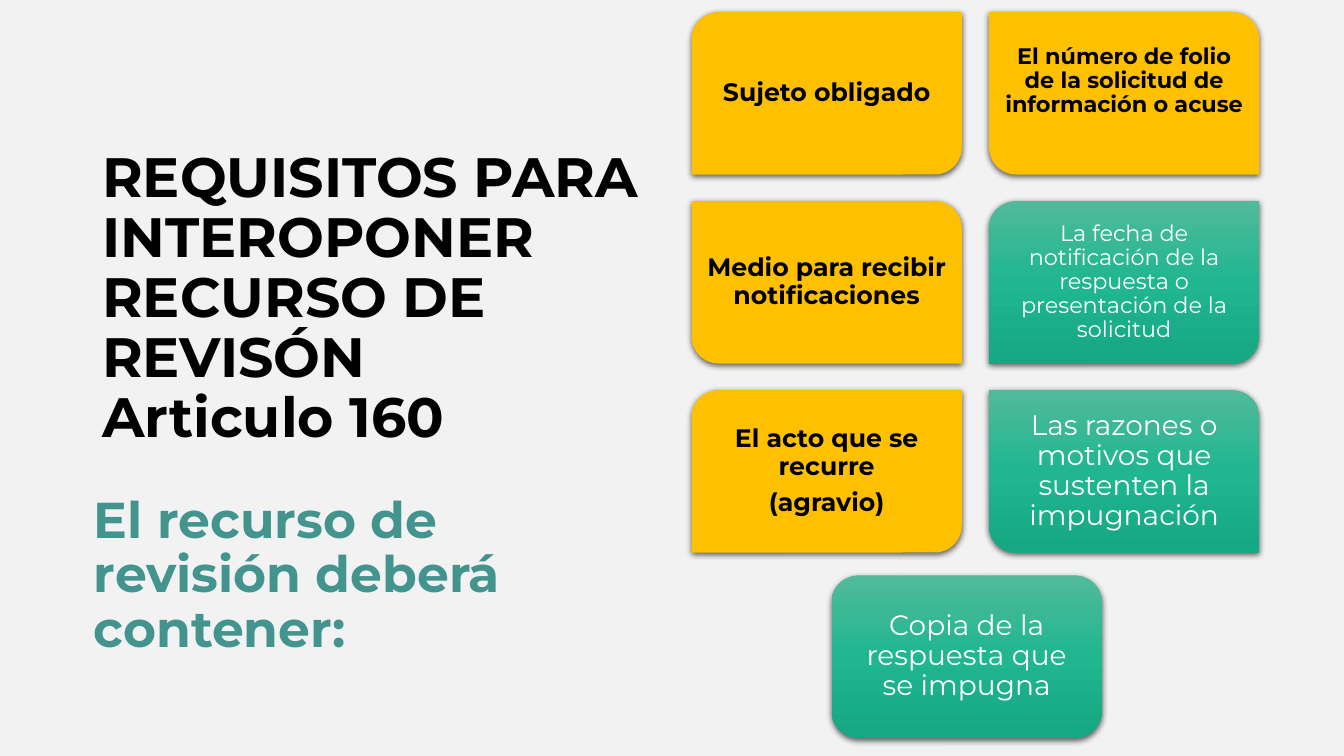
import copy

import pptx
import pptx.util
import pptx.dml.color
import pptx.enum.shapes
import pptx.enum.text
import pptx.oxml

Pt = pptx.util.Pt
RGBColor = pptx.dml.color.RGBColor
Shape = pptx.enum.shapes.MSO_SHAPE
Align = pptx.enum.text.PP_ALIGN
Anchor = pptx.enum.text.MSO_ANCHOR

FONT = "Montserrat"
GREY = RGBColor(0xF2, 0xF2, 0xF2)
BLACK = RGBColor(0, 0, 0)
WHITE = RGBColor(0xFF, 0xFF, 0xFF)
GOLD = RGBColor(0xFF, 0xC0, 0x00)
TEAL = RGBColor(0x43, 0x94, 0x8E)
GREENS = [
    (0, RGBColor(0x51, 0xBA, 0x9B)),
    (0.5, RGBColor(0x1F, 0xB6, 0x90)),
    (1, RGBColor(0x16, 0xA8, 0x83)),
]

TITLE = "REQUISITOS PARA INTEROPONER RECURSO DE REVISÓN\vArticulo 160"
LEAD = "El recurso de revisión deberá contener:"

# lines, size, gold, falling diagonal, bottom inset
CARDS = [
    (["Sujeto obligado"], 18, True, True, 5),
    (["El número de folio de la solicitud de información o acuse"], 16, True, False, 22),
    (["Medio para recibir notificaciones"], 18, True, False, 5),
    (["La fecha de notificación de la respuesta o presentación de la solicitud"], 16, False, True, 5),
    (["El acto que se recurre", "(agravio)"], 18, True, True, 5),
    (["Las razones o motivos que sustenten la impugnación"], 20, False, False, 6),
]
LAST = ["Copia de la respuesta que se impugna"]

LEFT, TOP = 494, 8.7
WIDE, HIGH = 193, 116
STEP_X, STEP_Y = 212.5, 135
ROUND = 0.16667

SHADOW = (
    '<a:outerShdw xmlns:a="http://schemas.openxmlformats.org/drawingml/2006/main" '
    'blurRad="57150" dist="19050" dir="5400000" algn="ctr" rotWithShape="0">'
    '<a:srgbClr val="000000"><a:alpha val="63000"/></a:srgbClr></a:outerShdw>'
)


def write(frame, lines, size, color, bold, align, after=0):
    frame.word_wrap = True
    for i, line in enumerate(lines):
        para = frame.paragraphs[0] if i == 0 else frame.add_paragraph()
        para.text = line
        para.alignment = align
        para.line_spacing = 0.9
        para.space_after = Pt(after)
        font = para.font
        font.name, font.size, font.bold = FONT, Pt(size), bold
        font.color.rgb = color


def add_text(slide, text, box, size, color, anchor):
    frame = slide.shapes.add_textbox(*map(Pt, box)).text_frame
    frame.vertical_anchor = anchor
    write(frame, [text], size, color, True, Align.LEFT)


def shade(fill):
    fill.gradient()
    fill.gradient_angle = 270
    stops = fill._fill._gradFill.gsLst
    stops.insert(1, copy.deepcopy(stops[0]))
    for stop, (place, color) in zip(fill.gradient_stops, GREENS):
        stop.position = place
        stop.color.rgb = color


def add_card(slide, kind, x, y, lines, size, gold, low):
    card = slide.shapes.add_shape(kind, Pt(x), Pt(y), Pt(WIDE), Pt(HIGH))
    if gold:
        card.fill.solid()
        card.fill.fore_color.rgb = GOLD
    else:
        shade(card.fill)
    card.line.fill.background()
    card.shadow.inherit = False
    effects = card._element.spPr.find(pptx.oxml.ns.qn("a:effectLst"))
    effects.append(pptx.oxml.parse_xml(SHADOW))
    frame = card.text_frame
    inset = 6 if size == 20 else 5
    frame.margin_left = frame.margin_right = frame.margin_top = Pt(inset)
    frame.margin_bottom = Pt(low)
    frame.vertical_anchor = Anchor.MIDDLE
    write(frame, lines, size, BLACK if gold else WHITE, gold, Align.CENTER, size * 0.35)
    return card


def main():
    deck = pptx.Presentation()
    deck.slide_width, deck.slide_height = Pt(960), Pt(540)
    slide = deck.slides.add_slide(deck.slide_layouts[6])
    slide.background.fill.solid()
    slide.background.fill.fore_color.rgb = GREY

    add_text(slide, TITLE, (66, 136, 407, 156), 39.6, BLACK, Anchor.MIDDLE)
    add_text(slide, LEAD, (60, 350, 407, 85), 36, TEAL, Anchor.TOP)

    for i, (lines, size, gold, fall, low) in enumerate(CARDS):
        row, col = divmod(i, 2)
        card = add_card(slide, Shape.ROUND_2_DIAG_RECTANGLE, LEFT + col * STEP_X,
                        TOP + row * STEP_Y, lines, size, gold, low)
        card.adjustments[0] = ROUND if fall else 0
        card.adjustments[1] = 0 if fall else ROUND

    add_card(slide, Shape.ROUNDED_RECTANGLE, 594, 411, LAST, 20, False, 6)
    deck.save("out.pptx")


if __name__ == "__main__":
    main()
